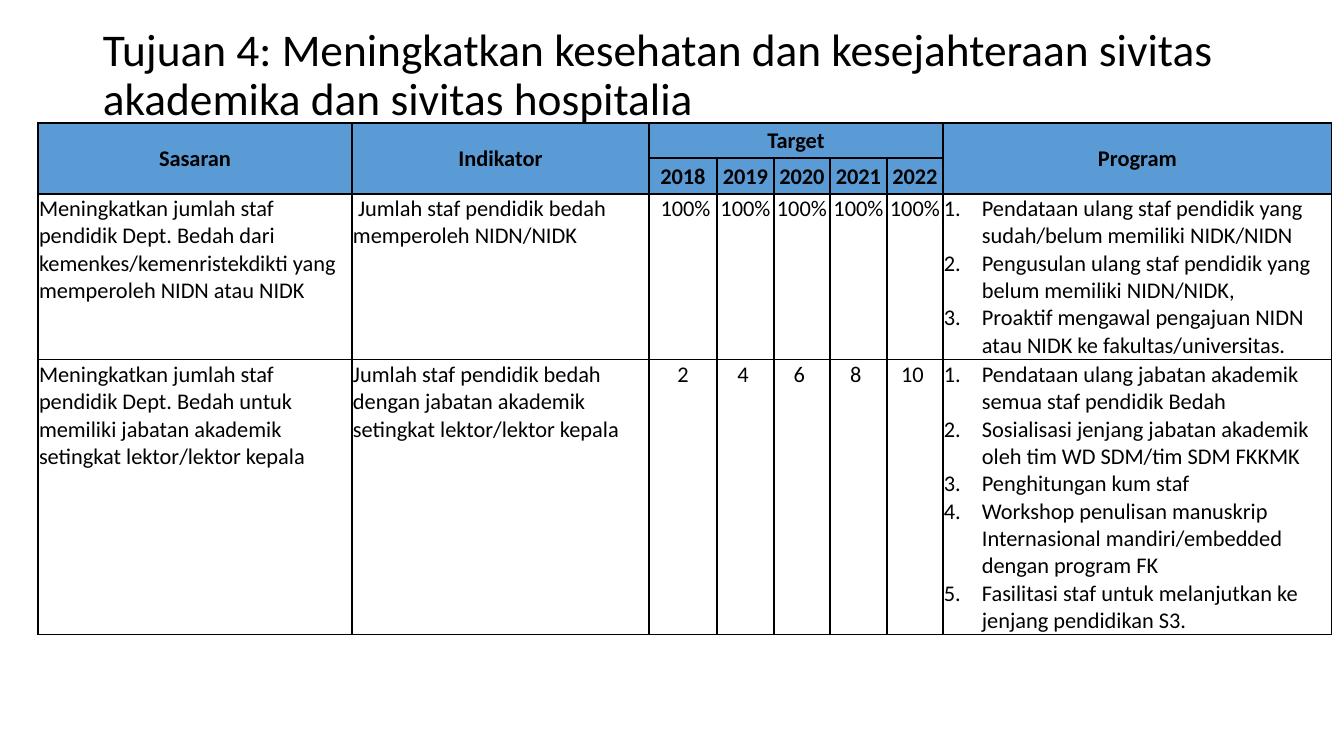
from lxml.etree import SubElement
from pptx import Presentation
from pptx.dml.color import RGBColor
from pptx.enum.text import MSO_ANCHOR, PP_ALIGN
from pptx.oxml.ns import qn
from pptx.util import Pt

PX = 914400 / 100.8
BLACK = RGBColor(0x00, 0x00, 0x00)
HEADER_BLUE = RGBColor(0x5B, 0x9B, 0xD5)
FONT = "Calibri"

COLUMN_WIDTHS = [314, 297, 68, 57, 56, 57, 56, 389]
ROW_HEIGHTS = [35, 36, 166, 275]
HEADER_ROWS = 2
PROGRAM_COLUMN = 7
TARGET_COLUMNS = range(2, PROGRAM_COLUMN)
NUMBER_INDENT = 38

TITLE = ("Tujuan 4: Meningkatkan kesehatan dan kesejahteraan sivitas "
         "akademika dan sivitas hospitalia")
ROWS = [
    ["Sasaran", "Indikator", "Target", "", "", "", "", "Program"],
    ["", "", "2018", "2019", "2020", "2021", "2022", ""],
    ["Meningkatkan jumlah staf pendidik Dept. Bedah dari "
     "kemenkes/kemenristekdikti yang memperoleh NIDN atau NIDK",
     " Jumlah staf pendidik bedah memperoleh NIDN/NIDK",
     " 100%", "100%", "100%", "100%", "100%",
     "Pendataan ulang staf pendidik yang sudah/belum memiliki NIDK/NIDN\n"
     "Pengusulan ulang staf pendidik yang belum memiliki NIDN/NIDK,\n"
     "Proaktif mengawal pengajuan NIDN atau NIDK ke fakultas/universitas."],
    ["Meningkatkan jumlah staf pendidik Dept. Bedah untuk memiliki jabatan "
     "akademik setingkat lektor/lektor kepala",
     "Jumlah staf pendidik bedah dengan jabatan akademik setingkat "
     "lektor/lektor kepala",
     "2", "4 ", "6 ", "8 ", "10 ",
     "Pendataan ulang jabatan akademik semua staf pendidik Bedah\n"
     "Sosialisasi jenjang jabatan akademik oleh tim WD SDM/tim SDM FKKMK\n"
     "Penghitungan kum staf\n"
     "Workshop penulisan manuskrip Internasional mandiri/embedded dengan "
     "program FK\n"
     "Fasilitasi staf untuk melanjutkan ke jenjang pendidikan S3."],
]


def px(length):
    return round(length * PX)


def add_borders(cell):
    properties = cell._tc.get_or_add_tcPr()
    for side in ("a:lnL", "a:lnR", "a:lnT", "a:lnB"):
        line = SubElement(properties, qn(side), w=str(Pt(1)))
        fill = SubElement(line, qn("a:solidFill"))
        SubElement(fill, qn("a:srgbClr"), val=str(BLACK))


prs = Presentation()
prs.slide_width, prs.slide_height = px(1344), px(756)
slide = prs.slides.add_slide(prs.slide_layouts[6])

heading = slide.shapes.add_textbox(px(93), px(40), px(1159), px(72)).text_frame
heading.word_wrap = True
heading.vertical_anchor = MSO_ANCHOR.MIDDLE
heading.text = TITLE
heading_line = heading.paragraphs[0]
heading_line.line_spacing = 0.9
heading_line.font.name = FONT
heading_line.font.size = Pt(32.4)
heading_line.font.color.rgb = BLACK

targets = slide.shapes.add_table(
    len(ROWS), len(COLUMN_WIDTHS), px(38), px(123),
    px(sum(COLUMN_WIDTHS)), px(sum(ROW_HEIGHTS))).table
targets.first_row = targets.horz_banding = False
for column, width in zip(targets.columns, COLUMN_WIDTHS):
    column.width = px(width)
for row, height in zip(targets.rows, ROW_HEIGHTS):
    row.height = px(height)

for r, texts in enumerate(ROWS):
    is_header = r < HEADER_ROWS
    for c, text in enumerate(texts):
        cell = targets.cell(r, c)
        cell.margin_left = cell.margin_right = cell.margin_top = px(1)
        cell.margin_bottom = 0
        add_borders(cell)
        if is_header:
            cell.fill.solid()
            cell.fill.fore_color.rgb = HEADER_BLUE
            cell.vertical_anchor = MSO_ANCHOR.MIDDLE
        else:
            cell.fill.background()
        cell.text = text
        for paragraph in cell.text_frame.paragraphs:
            if is_header or c in TARGET_COLUMNS:
                paragraph.alignment = PP_ALIGN.CENTER
            elif c == PROGRAM_COLUMN:
                numbering = paragraph._p.get_or_add_pPr()
                numbering.set("marL", str(px(NUMBER_INDENT)))
                numbering.set("indent", str(-px(NUMBER_INDENT)))
                SubElement(numbering, qn("a:buFont"), typeface="+mj-lt")
                SubElement(numbering, qn("a:buAutoNum"), type="arabicPeriod")
            paragraph.font.name = FONT
            paragraph.font.size = Pt(16)
            paragraph.font.bold = is_header
            paragraph.font.color.rgb = BLACK

for c in (0, 1, PROGRAM_COLUMN):
    targets.cell(0, c).merge(targets.cell(1, c))
targets.cell(0, TARGET_COLUMNS[0]).merge(targets.cell(0, TARGET_COLUMNS[-1]))

prs.save("out.pptx")
